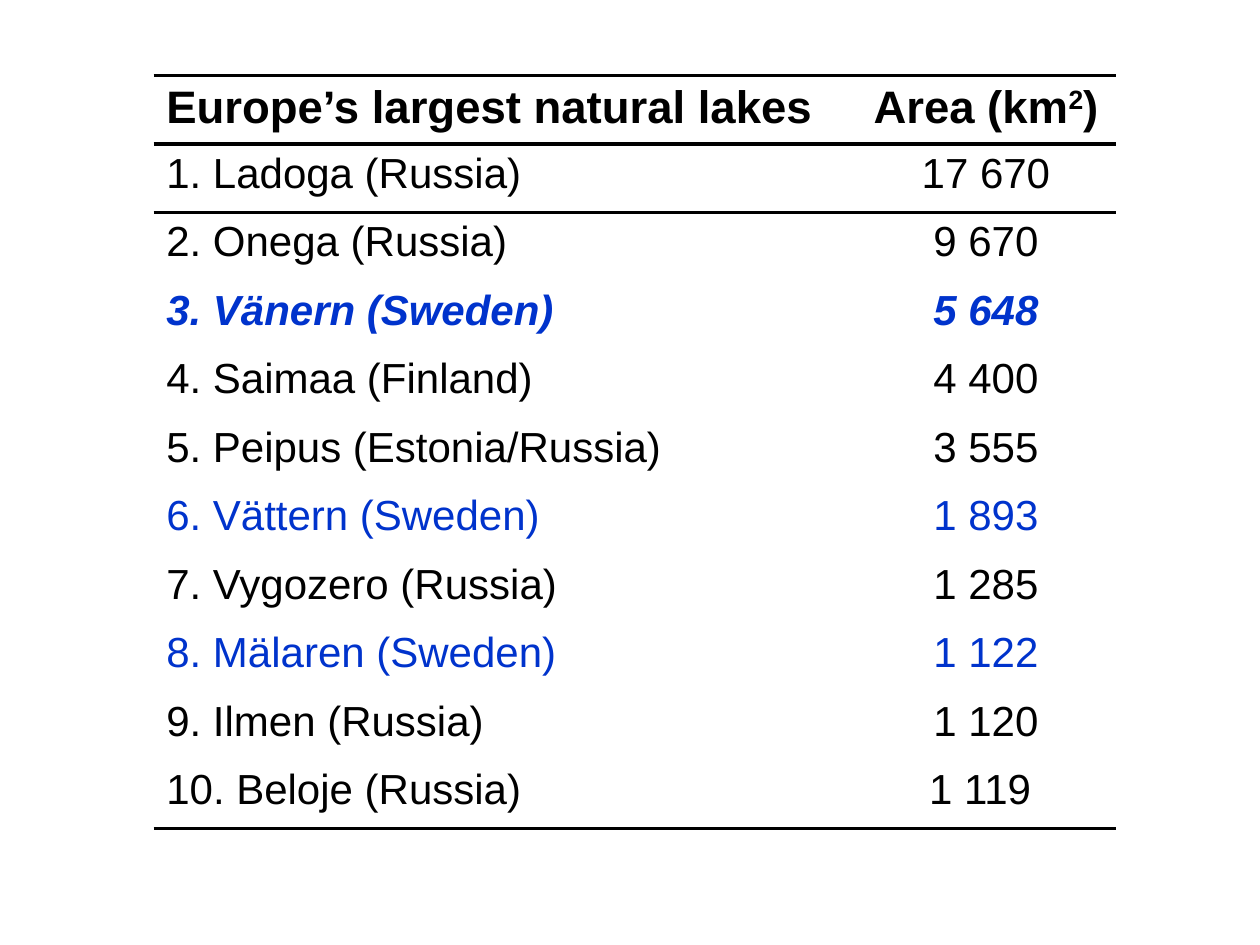
from lxml import etree
from pptx import Presentation
from pptx import util as u
from pptx.dml.color import RGBColor
from pptx.enum import text
from pptx.oxml import ns

BLACK = RGBColor(0x00, 0x00, 0x00)
BLUE = RGBColor(0x00, 0x33, 0xCC)
NO_TABLE_STYLE = "{2D5ABB26-0587-4C30-8999-92F81FD0307C}"

HEADER = ("Europe’s largest natural lakes", "Area (km", "2", ")")
# The trailing space shifts the last centred figure slightly left
LAKES = [
    ("1. Ladoga (Russia)", "17 670"),
    ("2. Onega (Russia)", "9 670"),
    ("3. Vänern (Sweden)", "5 648"),
    ("4. Saimaa (Finland)", "4 400"),
    ("5. Peipus (Estonia/Russia)", "3 555"),
    ("6. Vättern (Sweden)", "1 893"),
    ("7. Vygozero (Russia)", "1 285"),
    ("8. Mälaren (Sweden)", "1 122"),
    ("9. Ilmen (Russia)", "1 120"),
    ("10. Beloje (Russia)", "1 119 "),
]
LARGEST_SWEDISH = "3. Vänern (Sweden)"


class SlideBuilder:
    font_name = "Arial"
    rule_width = u.Pt(2.25)

    def __init__(self, page):
        self.page = page

    def table(self, left, top, widths, height, row_count):
        frame = self.page.shapes.add_table(
            row_count, len(widths), left, top, sum(widths), height)
        table = frame.table
        table.first_row = table.horz_banding = False
        style = frame._element.find(".//" + ns.qn("a:tableStyleId"))
        style.text = NO_TABLE_STYLE
        for column, width in zip(table.columns, widths):
            column.width = width
        for row in table.rows:
            row.height = height // row_count
        return table

    def cell(self, cell, parts, size, color=BLACK, bold=False, italic=False,
             centered=False):
        """Fill a cell; every second part is superscript."""
        cell.fill.background()
        para = cell.text_frame.paragraphs[0]
        if centered:
            para.alignment = text.PP_ALIGN.CENTER
        font = para.font
        font.name, font.size = self.font_name, u.Pt(size)
        font.bold, font.italic = bold, italic
        font.color.rgb = color
        for index, part in enumerate(parts):
            span = para.add_run()
            span.text = part
            if index % 2:
                span._r.get_or_add_rPr().set("baseline", "30000")

    def rules(self, cell, *sides):
        """Draw black borders on the given sides, top ("T") before bottom ("B")."""
        properties = cell._tc.get_or_add_tcPr()
        for position, side in enumerate(sides):
            line = etree.Element(ns.qn("a:ln" + side), w=str(self.rule_width))
            fill = etree.SubElement(line, ns.qn("a:solidFill"))
            etree.SubElement(fill, ns.qn("a:srgbClr"), val=str(BLACK))
            properties.insert(position, line)


def main():
    deck = Presentation()
    deck.slide_width, deck.slide_height = u.Inches(10), u.Inches(7.5)
    builder = SlideBuilder(deck.slides.add_slide(deck.slide_layouts[6]))

    table = builder.table(u.Inches(1.22), u.Inches(0.6),
                          [u.Inches(5.57), u.Inches(2.07)],
                          u.Inches(5.98), len(LAKES) + 1)

    # Header row
    builder.cell(table.cell(0, 0), HEADER[:1], 26, bold=True)
    builder.cell(table.cell(0, 1), HEADER[1:], 26, bold=True, centered=True)

    # Lakes, with the Swedish ones in blue
    for row, lake in enumerate(LAKES, start=1):
        color = BLUE if "Sweden" in lake[0] else BLACK
        strong = lake[0] == LARGEST_SWEDISH
        for column, value in enumerate(lake):
            builder.cell(table.cell(row, column), [value], 24, color,
                         bold=strong, italic=strong, centered=column == 1)

    # Rules around the header and under the last row
    for column in range(2):
        builder.rules(table.cell(0, column), "T", "B")
        builder.rules(table.cell(1, column), "T")
        builder.rules(table.cell(len(LAKES), column), "B")

    deck.save("out.pptx")


if __name__ == "__main__":
    main()
